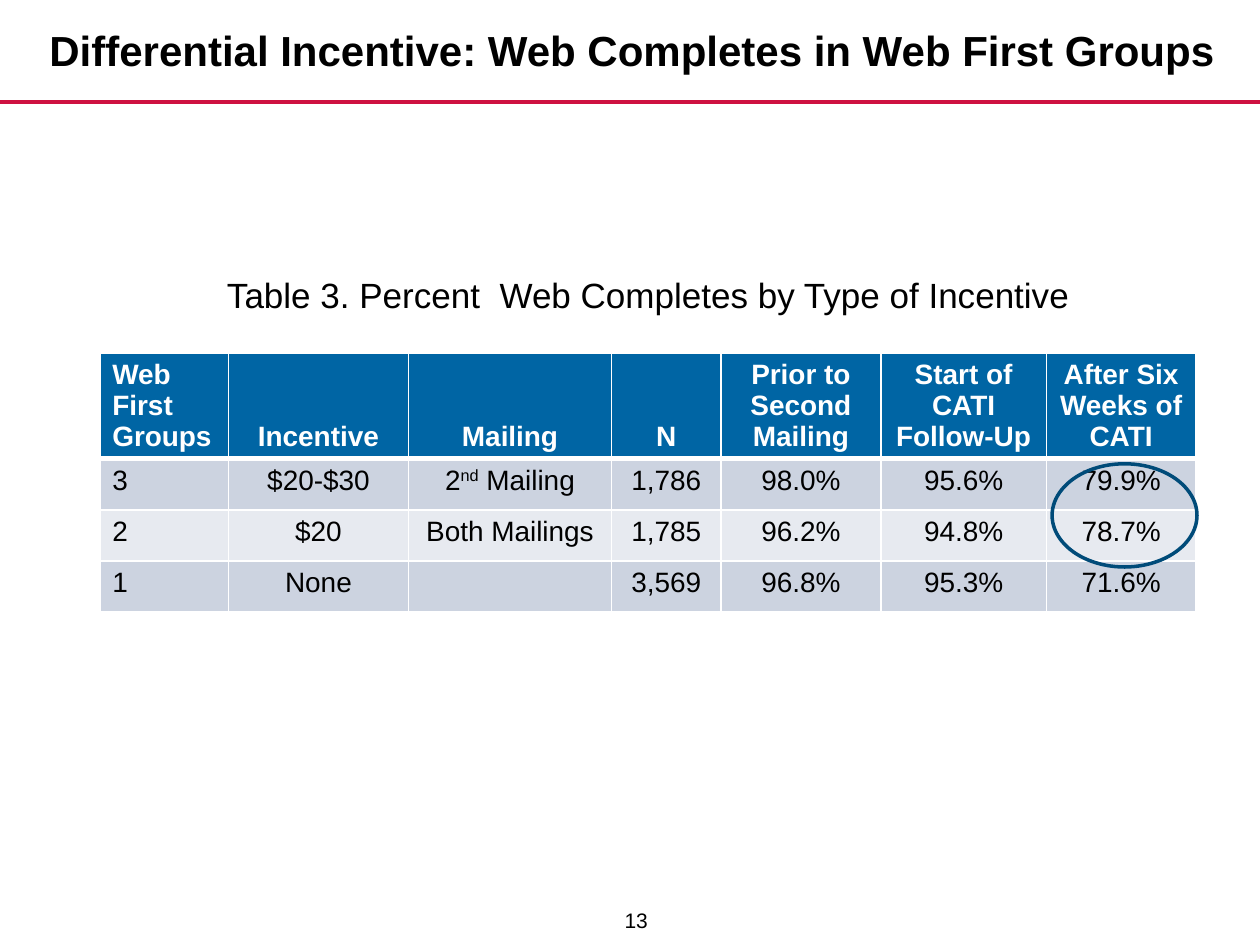
"""Build the slide on web completes by type of incentive."""
from dataclasses import dataclass

from lxml.etree import SubElement
from pptx import Presentation
from pptx.dml.color import RGBColor
from pptx.enum.shapes import MSO_CONNECTOR, MSO_SHAPE
from pptx.enum.text import MSO_ANCHOR, MSO_AUTO_SIZE, PP_ALIGN
from pptx.oxml.ns import qn
from pptx.util import Pt

HUES = {
    "ink": "000000", "white": "FFFFFF", "rule": "CE1141", "ring": "004B79",
    "head": "0065A4", "dark": "CCD3E0", "light": "E7EAF0",
}
WIDTHS = [73.5, 103, 116, 62.5, 91.5, 94.5, 85.5]
HEADS = [
    "Web First\nGroups", "Incentive", "Mailing", "N",
    "Prior to\nSecond\nMailing", "Start of\nCATI\nFollow-Up",
    "After Six\vWeeks of\vCATI",
]
ROWS = [
    ["3", "$20-$30", "2^nd^ Mailing", "1,786", "98.0%", "95.6%", "79.9%"],
    ["2", "$20", "Both Mailings", "1,785", "96.2%", "94.8%", "78.7%"],
    ["1", "None", "", "3,569", "96.8%", "95.3%", "71.6%"],
]


@dataclass
class Style:
    size: float
    hue: str = "ink"
    bold: bool = False
    align: PP_ALIGN = PP_ALIGN.LEFT


@dataclass
class Label:
    text: str
    box: tuple[float, float, float, float]
    style: Style
    anchor: MSO_ANCHOR = MSO_ANCHOR.TOP


def color(name: str) -> RGBColor:
    return RGBColor.from_string(HUES[name])


def write(frame, text: str, style: Style) -> None:
    for i, line in enumerate(text.split("\n")):
        para = frame.add_paragraph() if i else frame.paragraphs[0]
        for j, part in enumerate(line.split("^")):
            if "\v" in part:
                para.text = part
            elif part:
                run = para.add_run()
                run.text = part
                if j % 2:
                    run.font._element.set("baseline", "30000")
        para.alignment = style.align
        font = para.font
        font.name, font.size, font.bold = "Arial", Pt(style.size), style.bold
        font.color.rgb = color(style.hue)


def place(shape, label: Label) -> None:
    shape.left, shape.top, shape.width, shape.height = map(Pt, label.box)
    frame = shape.text_frame
    frame.word_wrap = True
    frame.auto_size = MSO_AUTO_SIZE.NONE
    frame.vertical_anchor = label.anchor
    write(frame, label.text, label.style)


def edge(cell, side: str, width: float) -> None:
    line = SubElement(cell._tc.get_or_add_tcPr(), qn(f"a:ln{side}"), w=str(Pt(width)))
    fill = SubElement(line, qn("a:solidFill"))
    SubElement(fill, qn("a:srgbClr"), val=HUES["white"])


def draw_table(slide) -> None:
    data = [HEADS] + ROWS
    heights = [60.5] + [29.2] * len(ROWS)
    table = slide.shapes.add_table(
        len(data), len(WIDTHS), Pt(57), Pt(201.6), Pt(sum(WIDTHS)), Pt(sum(heights))
    ).table
    for col, width in zip(table.columns, WIDTHS):
        col.width = Pt(width)
    for r, (texts, height) in enumerate(zip(data, heights)):
        table.rows[r].height = Pt(height)
        head = r == 0
        for c, text in enumerate(texts):
            cell = table.cell(r, c)
            for side in "LRTB":
                thick = (r, side) in [(0, "B"), (1, "T")]
                edge(cell, side, 3 if thick else 1)
            cell.fill.solid()
            cell.fill.fore_color.rgb = color("head" if head else "dark" if r % 2 else "light")
            cell.vertical_anchor = MSO_ANCHOR.BOTTOM if head else MSO_ANCHOR.TOP
            align = PP_ALIGN.CENTER if c else PP_ALIGN.LEFT
            write(cell.text_frame, text, Style(16, "white" if head else "ink", head, align))


def main() -> None:
    deck = Presentation()
    deck.slide_width, deck.slide_height = Pt(720), Pt(540)
    slide = deck.slides.add_slide(deck.slide_layouts[5])
    shapes = slide.shapes

    rule = shapes.add_connector(MSO_CONNECTOR.STRAIGHT, 0, Pt(58.3), Pt(720), Pt(58.3))
    rule.line.color.rgb = color("rule")
    rule.line.width = Pt(2)
    SubElement(rule._element.spPr, qn("a:effectLst"))

    draw_table(slide)
    place(shapes.title, Label(
        "Differential Incentive: Web Completes in Web First Groups",
        (21, 2.2, 684, 52.6), Style(24, bold=True), MSO_ANCHOR.MIDDLE))
    labels = [
        Label("13", (342.7, 511.2, 34.6, 28.8),
              Style(12, align=PP_ALIGN.RIGHT), MSO_ANCHOR.MIDDLE),
        Label("Table 3. Percent  Web Completes by Type of Incentive",
              (54, 152.6, 633, 31.7), Style(20, align=PP_ALIGN.CENTER)),
    ]
    for label in labels:
        place(shapes.add_textbox(0, 0, 0, 0), label)

    ring = shapes.add_shape(MSO_SHAPE.OVAL, Pt(601.2), Pt(265), Pt(82.8), Pt(59))
    ring.shadow.inherit = False
    ring.fill.background()
    ring.line.color.rgb = color("ring")
    ring.line.width = Pt(2)
    deck.save("out.pptx")


if __name__ == "__main__":
    main()
